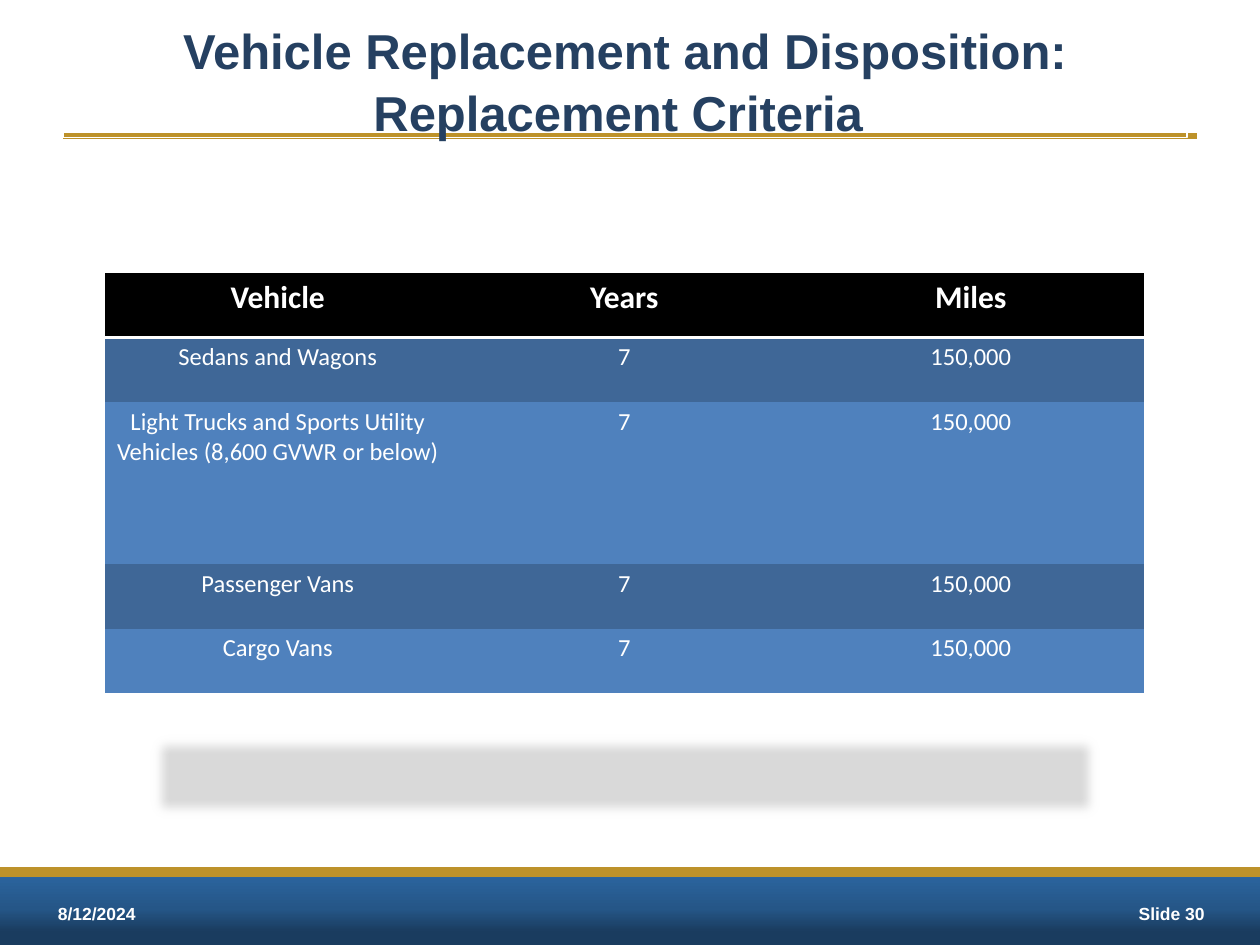
from lxml import etree
from pptx import Presentation
from pptx import util as u
from pptx.dml.color import RGBColor
from pptx.enum import shapes, text
from pptx.oxml import parse_xml
from pptx.oxml.ns import nsdecls, qn

# Content
HEADING = "Vehicle Replacement and Disposition: Replacement Criteria "
FOOTER = "8/12/2024\tSlide 30"
CRITERIA = [
    ("Vehicle", "Years", "Miles"),
    ("Sedans and Wagons", "7", "150,000"),
    ("Light Trucks and Sports Utility Vehicles (8,600 GVWR or below)", "7", "150,000"),
    ("Passenger Vans", "7", "150,000"),
    ("Cargo Vans", "7", "150,000"),
]
ROW_HEIGHTS = [0.51, 0.51, 1.29, 0.51, 0.51]
COLUMN_WIDTH = 2.75

THEME = {
    "gold": "BD922A", "navy": "254061", "white": "FFFFFF", "grey": "D9D9D9",
    "header": "000000", "bands": ("3F6797", "4F81BD"),
    "footer_stops": ((0, "1A3C5F"), (18, "1A3C5F"), (50, "255687"), (100, "2B66A1")),
    "heading": {"name": "Arial", "size": u.Pt(28), "bold": True},
    "footer": {"name": "Arial", "size": u.Pt(10), "bold": True},
    "column_head": {"name": "Calibri", "size": u.Pt(18), "bold": True},
    "cell": {"name": "Calibri", "size": u.Pt(14), "bold": False},
}


def box(left, top, width, height):
    return [u.Inches(v) for v in (left, top, width, height)]


def write(paragraph, words, style, color, align=text.PP_ALIGN.CENTER):
    paragraph.alignment = align
    run = paragraph.add_run()
    run.text = words
    for key, value in THEME[style].items():
        setattr(run.font, key, value)
    run.font.color.rgb = RGBColor.from_string(color)


def add_rule(slide, left, right, y, width):
    rule = slide.shapes.add_connector(
        shapes.MSO_CONNECTOR.STRAIGHT, *box(left, y, right, y))
    rule.line.color.rgb = RGBColor.from_string(THEME["gold"])
    rule.line.width = u.Pt(width)
    etree.SubElement(rule._element.spPr, qn("a:effectLst"))


def add_panel(slide, *place):
    panel = slide.shapes.add_shape(shapes.MSO_SHAPE.RECTANGLE, *box(*place))
    panel.shadow.inherit = False
    panel.line.fill.background()
    return panel


def add_footer(slide):
    band = add_panel(slide, 0, 6.92, 10, 0.58)
    stops = "".join(
        f'<a:gs pos="{pos * 1000}"><a:srgbClr val="{color}"/></a:gs>'
        for pos, color in THEME["footer_stops"])
    band._element.spPr.find(qn("a:prstGeom")).addnext(parse_xml(
        f'<a:gradFill {nsdecls("a")}><a:gsLst>{stops}</a:gsLst>'
        '<a:lin ang="16200000" scaled="0"/></a:gradFill>'))

    # Date on the left, slide number on a right tab
    frame = slide.shapes.add_textbox(*box(0.25, 7.04, 9.58, 0.42)).text_frame
    frame.word_wrap = True
    frame.vertical_anchor = text.MSO_ANCHOR.MIDDLE
    frame.margin_left, frame.margin_right = u.Inches(0.21), u.Inches(0.1)
    line = frame.paragraphs[0]
    write(line, FOOTER, "footer", THEME["white"], text.PP_ALIGN.LEFT)
    tabs = etree.SubElement(line._p.get_or_add_pPr(), qn("a:tabLst"))
    etree.SubElement(tabs, qn("a:tab"), pos=str(u.Inches(9.1)), algn="r")
    add_rule(slide, 0, 10, 6.92, 6)


def add_criteria(slide):
    columns = len(CRITERIA[0])
    table = slide.shapes.add_table(
        len(CRITERIA), columns,
        *box(0.83, 2.17, COLUMN_WIDTH * columns, sum(ROW_HEIGHTS))).table
    for column in table.columns:
        column.width = u.Inches(COLUMN_WIDTH)
    for r, (values, height) in enumerate(zip(CRITERIA, ROW_HEIGHTS)):
        table.rows[r].height = u.Inches(height)
        fill = THEME["bands"][(r - 1) % 2] if r else THEME["header"]
        for c, value in enumerate(values):
            cell = table.cell(r, c)
            cell.margin_left = cell.margin_right = u.Inches(0.07)
            cell.margin_top = cell.margin_bottom = u.Inches(0.04)
            write(cell.text_frame.paragraphs[0], value,
                  "cell" if r else "column_head", THEME["white"])
            # Borders come before the fill in the cell properties
            properties = cell._tc.get_or_add_tcPr()
            for side in ("lnL", "lnR", "lnT", "lnB"):
                ruled = (r, side) in ((0, "lnB"), (1, "lnT"))
                edge = etree.SubElement(properties, qn(f"a:{side}"),
                                        w=str(u.Pt(2) if ruled else 0))
                paint = etree.SubElement(
                    edge, qn("a:solidFill" if ruled else "a:noFill"))
                if ruled:
                    etree.SubElement(paint, qn("a:srgbClr"), val=THEME["white"])
            cell.fill.solid()
            cell.fill.fore_color.rgb = RGBColor.from_string(fill)


def add_soft_panel(slide):
    panel = add_panel(slide, 1.17, 5.81, 7.58, 0.71)
    panel.fill.solid()
    panel.fill.fore_color.rgb = RGBColor.from_string(THEME["grey"])
    effects = panel._element.spPr.find(qn("a:effectLst"))
    etree.SubElement(effects, qn("a:softEdge"), rad=str(u.Inches(0.1)))


def add_heading(slide):
    heading = slide.shapes.add_textbox(*box(0.5, 0.17, 8.92, 0.92))
    heading.line.color.rgb = RGBColor.from_string(THEME["white"])
    heading.line.width = u.Pt(0.75)
    frame = heading.text_frame
    frame.word_wrap = True
    frame.vertical_anchor = text.MSO_ANCHOR.MIDDLE
    line = frame.paragraphs[0]
    line.line_spacing = 1.05
    write(line, HEADING, "heading", THEME["navy"])


def main():
    deck = Presentation()
    deck.slide_width, deck.slide_height = u.Inches(10), u.Inches(7.5)
    slide = deck.slides.add_slide(deck.slide_layouts[6])
    add_rule(slide, 0.5, 9.5, 1.08, 3)
    add_footer(slide)
    add_criteria(slide)
    add_soft_panel(slide)
    add_heading(slide)
    deck.save("out.pptx")


if __name__ == "__main__":
    main()
